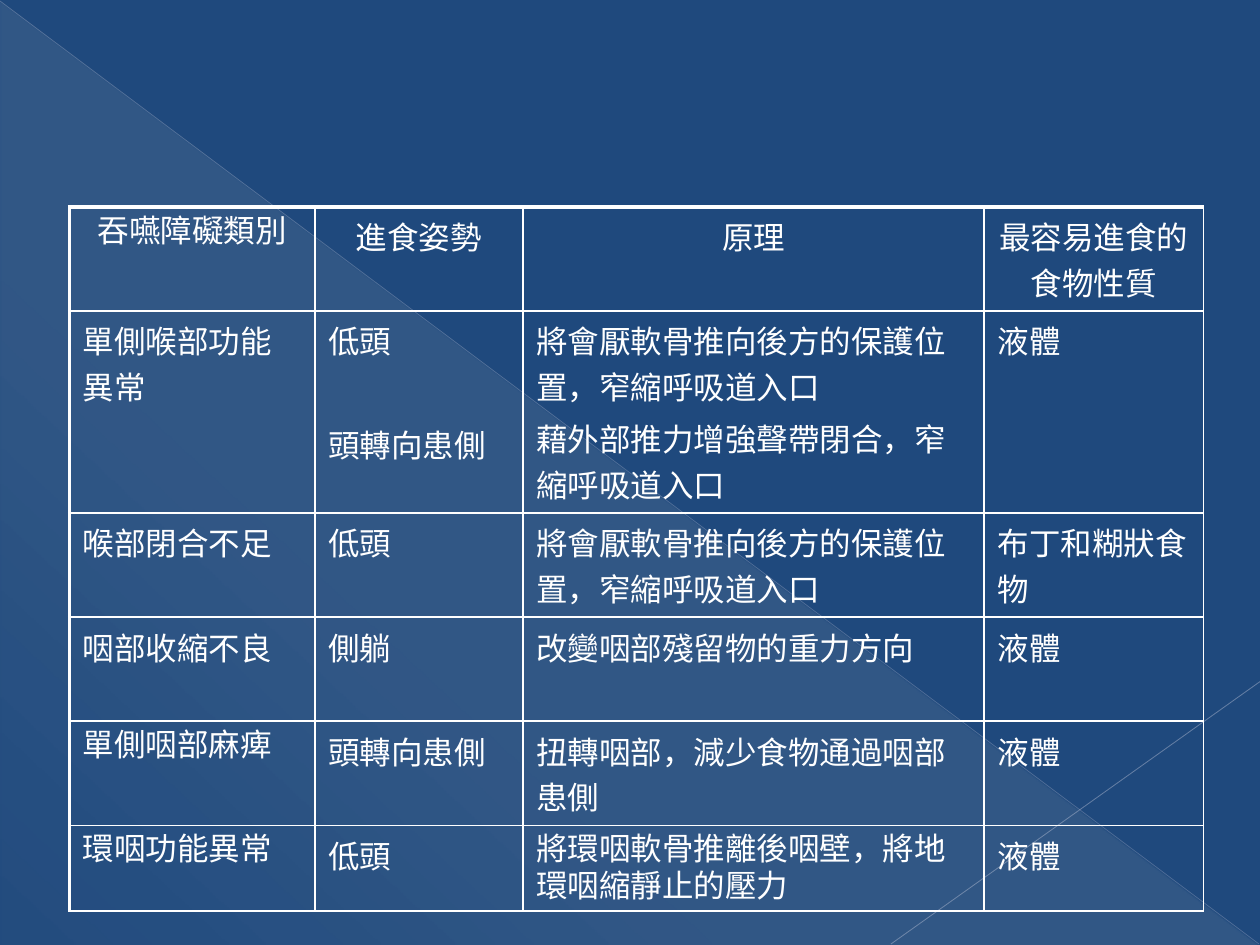
from lxml import etree
from pptx import Presentation
from pptx.dml.color import RGBColor
from pptx.enum.shapes import MSO_CONNECTOR, MSO_SHAPE
from pptx.enum.text import PP_ALIGN
from pptx.oxml import parse_xml
from pptx.oxml.ns import qn
from pptx.util import Cm, Pt

STRAIGHT = MSO_CONNECTOR.STRAIGHT
TRIANGLE = MSO_SHAPE.RIGHT_TRIANGLE
CENTER, LEFT = PP_ALIGN.CENTER, PP_ALIGN.LEFT

COLORS = {
    "background": "1F497D",
    "glow": "EEECE1",
    "diagonal": "ADB6CE",
    "corner": "B6BED3",
    "white": "FFFFFF",
}
FONT = "Noto Sans CJK SC"
NAMESPACE = 'xmlns:a="http://schemas.openxmlformats.org/drawingml/2006/main"'

COLUMN_WIDTHS = [4.95, 4.19, 9.3, 4.42]
ROW_HEIGHTS = [2.08, 4.07, 2.08, 2.1, 2.1, 1.73]
ROWS = [
    ["吞嚥障礙類別", "進食姿勢", "原理", "最容易進食的食物性質"],
    ["單側喉部功能異常", "低頭\n頭轉向患側",
     "將會厭軟骨推向後方的保護位置，窄縮呼吸道入口\n藉外部推力增強聲帶閉合，窄縮呼吸道入口", "液體"],
    ["喉部閉合不足", "低頭", "將會厭軟骨推向後方的保護位置，窄縮呼吸道入口", "布丁和糊狀食物"],
    ["咽部收縮不良", "側躺", "改變咽部殘留物的重力方向", "液體"],
    ["單側咽部麻痺", "頭轉向患側", "扭轉咽部，減少食物通過咽部患側", "液體"],
    ["環咽功能異常", "低頭", "將環咽軟骨推離後咽壁，將地環咽縮靜止的壓力", "液體"],
]
TIGHT_CELLS = {(0, 0), (4, 0), (5, 0), (5, 2)}
SECOND_POSTURE = "頭轉向患側"


class SlideBuilder:
    """Holds the style and the slide being built."""

    def __init__(self, slide):
        self.slide = slide

    def background(self, color):
        fill = self.slide.background.fill
        fill.solid()
        fill.fore_color.rgb = RGBColor.from_string(COLORS[color])

    def glow_triangle(self, left, top, width, height, color, stops, angle):
        shape = self.slide.shapes.add_shape(
            TRIANGLE, Cm(left), Cm(top), Cm(width), Cm(height))
        shape.shadow.inherit = False
        shape.line.fill.background()
        shape.fill.background()
        stop_xml = "".join(
            f'<a:gs pos="{position * 1000}"><a:srgbClr val="{COLORS[color]}">'
            f'<a:alpha val="{alpha * 1000}"/></a:srgbClr></a:gs>'
            for position, alpha in stops)
        gradient = parse_xml(
            f'<a:gradFill {NAMESPACE} rotWithShape="1"><a:gsLst>{stop_xml}</a:gsLst>'
            f'<a:lin ang="{angle * 60000}" scaled="0"/></a:gradFill>')
        properties = shape.element.spPr
        properties.replace(properties.find(qn("a:noFill")), gradient)

    def line(self, start, end, color, width, opacity):
        connector = self.slide.shapes.add_connector(
            STRAIGHT, *(Cm(value) for value in start + end))
        connector.line.width = Pt(width)
        connector.line.color.rgb = RGBColor.from_string(COLORS[color])
        properties = connector.element.spPr
        alpha = etree.SubElement(next(properties.iter(qn("a:srgbClr"))), qn("a:alpha"))
        alpha.set("val", str(opacity * 1000))
        etree.SubElement(properties, qn("a:effectLst"))

    def table(self, left, top, rows):
        frame = self.slide.shapes.add_table(
            len(rows), len(COLUMN_WIDTHS), Cm(left), Cm(top),
            Cm(sum(COLUMN_WIDTHS)), Cm(sum(ROW_HEIGHTS)))
        table = frame.table
        table.first_row = table.horz_banding = False
        for column, width in zip(table.columns, COLUMN_WIDTHS):
            column.width = Cm(width)
        for row, height in zip(table.rows, ROW_HEIGHTS):
            row.height = Cm(height)
        for row_index, texts in enumerate(rows):
            for column_index, text in enumerate(texts):
                cell = table.cell(row_index, column_index)
                self.cell_text(cell, text, CENTER if row_index == 0 else LEFT,
                               (row_index, column_index) in TIGHT_CELLS)
                self.cell_borders(cell, row_index == 0, column_index == 0)

    def cell_text(self, cell, text, alignment, tight):
        cell.margin_left = cell.margin_right = Cm(0.27)
        cell.margin_top = cell.margin_bottom = Cm(0.13)
        cell.text = text
        for index, paragraph in enumerate(cell.text_frame.paragraphs):
            paragraph.alignment = alignment
            # The second posture lines up with the second principle
            lowered = index > 0 and paragraph.text == SECOND_POSTURE
            paragraph.space_before = Pt(33 if lowered else 3.6)
            if tight:
                paragraph.line_spacing = 0.8
            font = paragraph.font
            font.size = Pt(18)
            font.name = FONT
            font.color.rgb = RGBColor.from_string(COLORS["white"])
            for run in paragraph.runs:
                east_asian = etree.SubElement(run.font._element, qn("a:ea"))
                east_asian.set("typeface", FONT)

    def cell_borders(self, cell, first_row, first_column):
        cell.fill.background()
        properties = cell._tc.get_or_add_tcPr()
        widths = {"lnL": 2.25 if first_column else 1, "lnR": 1,
                  "lnT": 2.25 if first_row else 1, "lnB": 1}
        # Borders come before the fill
        for index, (side, width) in enumerate(widths.items()):
            properties.insert(index, parse_xml(
                f'<a:{side} {NAMESPACE} w="{Pt(width)}"><a:solidFill>'
                f'<a:srgbClr val="{COLORS["white"]}"/></a:solidFill></a:{side}>'))


def main():
    presentation = Presentation()
    presentation.slide_width, presentation.slide_height = Cm(25.4), Cm(19.05)
    slide = presentation.slides.add_slide(presentation.slide_layouts[6])
    builder = SlideBuilder(slide)

    # Backdrop
    builder.background("background")
    builder.glow_triangle(0.02, 0.04, 25.35, 19, "glow",
                          [(0, 10), (70, 8), (100, 1)], 133)
    builder.line((0, 0.02), (25.38, 19.03), "diagonal", 0.39, 35)
    builder.line((25.4, 13.74), (17.96, 19.03), "corner", 0.47, 45)

    # Swallowing disorders and eating postures
    builder.table(1.4, 4.17, ROWS)

    presentation.save("out.pptx")


if __name__ == "__main__":
    main()
